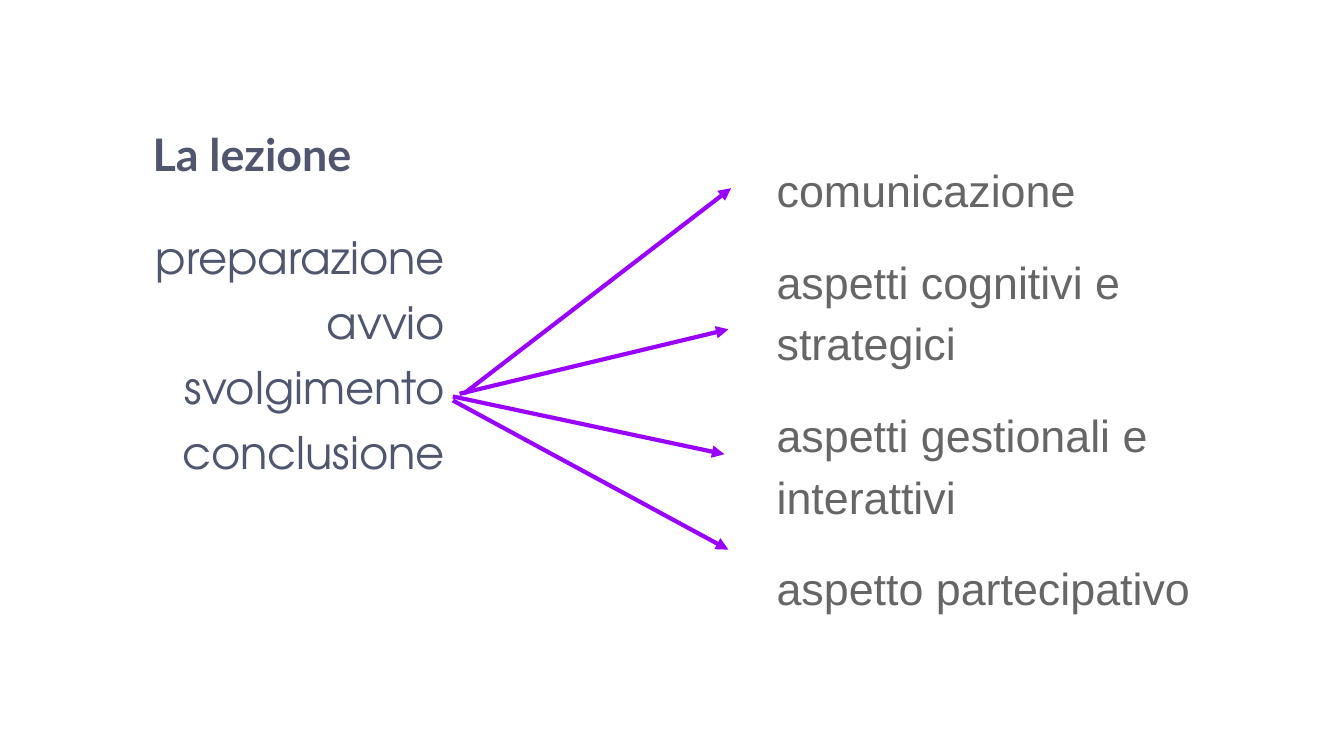
from lxml import etree
from pptx import Presentation
from pptx.dml.color import RGBColor
from pptx.enum.shapes import MSO_CONNECTOR
from pptx.enum.text import MSO_ANCHOR, PP_ALIGN
from pptx.oxml.ns import qn
from pptx.util import Inches, Pt

STRAIGHT = MSO_CONNECTOR.STRAIGHT
TOP, BOTTOM = MSO_ANCHOR.TOP, MSO_ANCHOR.BOTTOM
LEFT, CENTER, RIGHT = PP_ALIGN.LEFT, PP_ALIGN.CENTER, PP_ALIGN.RIGHT
SLATE = RGBColor(0x50, 0x56, 0x70)
GRAY = RGBColor(0x66, 0x66, 0x66)
PURPLE = RGBColor(0x99, 0x00, 0xFF)

PHASES = ["preparazione", "avvio", "svolgimento", "conclusione"]
ASPECTS = [
    "comunicazione",
    "aspetti cognitivi e strategici",
    "aspetti gestionali e interattivi",
    "aspetto partecipativo",
]
ARROWS = [
    ((3.45, 2.93), (5.44, 1.4)),
    ((3.42, 2.93), (5.42, 2.45)),
    ((3.37, 2.95), (5.39, 3.38)),
    ((3.37, 2.98), (5.42, 4.09)),
]


class LessonSlide:
    """Draws text blocks and arrows in the lesson style on one slide."""

    text_size = Pt(24)
    inset = Inches(0.1)
    line_width = Pt(2.25)

    def __init__(self, slide):
        self.slide = slide

    def add_text(self, box, lines, font_name, color, align=LEFT, anchor=TOP,
                 gap=0, line_spacing=1.0, bold=False):
        shape = self.slide.shapes.add_textbox(*map(Inches, box))
        frame = shape.text_frame
        frame.word_wrap = True
        frame.vertical_anchor = anchor
        frame.margin_left = frame.margin_right = self.inset
        frame.margin_top = frame.margin_bottom = self.inset
        frame.text = "\n".join(lines)
        for index, paragraph in enumerate(frame.paragraphs):
            paragraph.alignment = align
            paragraph.line_spacing = line_spacing
            paragraph.space_before = Pt(gap if index else 0)
            for run in paragraph.runs:
                run.font.name = font_name
                run.font.size = self.text_size
                run.font.bold = bold
                run.font.color.rgb = color

    def add_arrow(self, start, end):
        connector = self.slide.shapes.add_connector(
            STRAIGHT, *map(Inches, start + end))
        connector.line.color.rgb = PURPLE
        connector.line.width = self.line_width
        line = connector.line._get_or_add_ln()
        etree.SubElement(line, qn("a:tailEnd"), type="triangle")
        etree.SubElement(connector._element.spPr, qn("a:effectLst"))


def main():
    presentation = Presentation()
    presentation.slide_width = Inches(10)
    presentation.slide_height = Inches(10 * 9 / 16)
    slide = presentation.slides.add_slide(presentation.slide_layouts[6])
    lesson = LessonSlide(slide)

    lesson.add_text((0.34, 0.61, 3.07, 0.83), ["La lezione"], "Lato", SLATE,
                    align=CENTER, anchor=BOTTOM, bold=True)
    lesson.add_text((0.34, 1.61, 3.07, 3.39), PHASES, "TeX Gyre Adventor",
                    SLATE, align=RIGHT, gap=6)
    lesson.add_text((5.68, 1.05, 3.28, 3.28), ASPECTS, "Arial", GRAY,
                    gap=16, line_spacing=1.15)
    for start, end in ARROWS:
        lesson.add_arrow(start, end)

    presentation.save("out.pptx")


if __name__ == "__main__":
    main()
